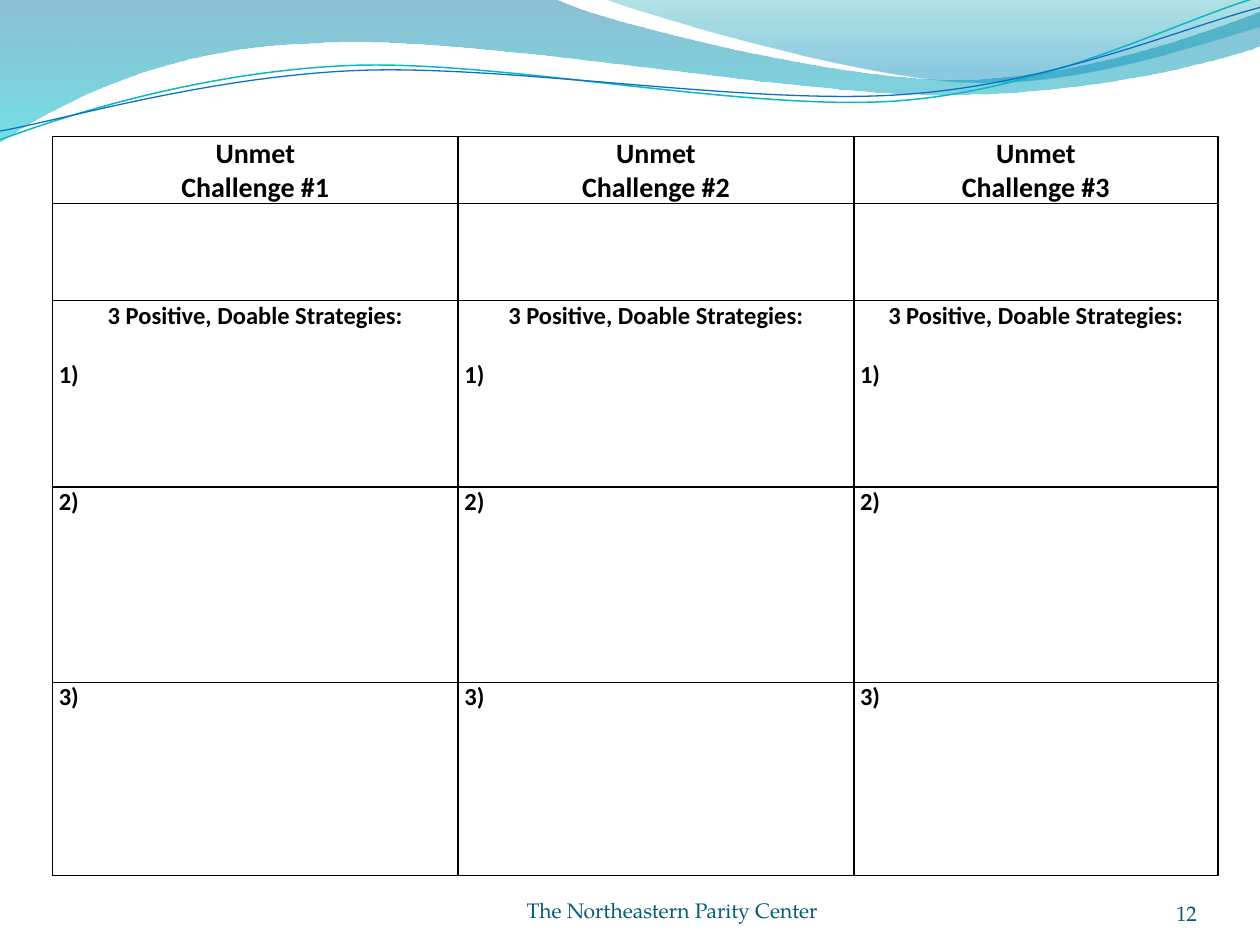
import math
from dataclasses import dataclass
from typing import Optional

from lxml import etree
from pptx import Presentation
from pptx import util as u
from pptx.dml.color import RGBColor
from pptx.enum import text
from pptx.oxml import ns

WIDTH, HEIGHT = u.Inches(10), u.Inches(7.5)
GRID_COLUMNS, GRID_ROWS = 10, 7.5
COLORS = {
    "ink": "000000",
    "footer": "045D75",
    "deep": "0074A1",
    "aqua": "00C6CF",
    "teal": "00A1A9",
    "sky": "008BBF",
    "teal_line": "0AB8BF",
    "blue_line": "0F6FC6",
}
TABLE_LEFT, TABLE_TOP = 5 / 12, 13 / 12
COLUMN_WIDTHS = (3.22, 3.14, 2.89)
ROW_HEIGHTS = (0.5, 0.77, 1.48, 1.55, 1.53)

Point = tuple[float, float]


@dataclass(frozen=True)
class Stop:
    position: float
    color: str
    opacity: int


@dataclass(frozen=True)
class Wave:
    start: Point
    segments: tuple[tuple[float, ...], ...]
    stops: tuple[Stop, ...] = ()
    line: Optional[str] = None
    weight: float = 0
    tilt: float = 0
    pivot: Point = (0, 0)


@dataclass(frozen=True)
class Label:
    wording: str
    left: float
    top: float
    width: float
    alignment: text.PP_ALIGN


@dataclass(frozen=True)
class Entry:
    wording: str
    size: int
    alignment: text.PP_ALIGN = text.PP_ALIGN.LEFT
    space_before: int = 0


WAVES = (
    Wave(
        (0, 0),
        (
            (4.4, -0.01),
            (4.76, 0.17, 6.64, 0.63, 7.58, 0.63),
            (8.53, 0.63, 9.58, 0.26, 10, 0.09),
            (10.01, 0.36),
            (9.83, 0.44, 8.7, 0.76, 7.46, 0.75),
            (6.22, 0.75, 3.82, 0.28, 2.57, 0.34),
            (1.29, 0.36, 0.46, 0.83, -0.01, 1.13),
            (0, 0),
        ),
        stops=(Stop(0, "deep", 45), Stop(1, "aqua", 55)),
    ),
    Wave(
        (4.79, -0.01),
        (
            (5.09, 0.11, 6.82, 0.62, 7.69, 0.65),
            (8.56, 0.69, 9.61, 0.32, 10, 0.21),
            (10, 0),
            (4.79, -0.01),
        ),
        stops=(Stop(0, "teal", 30), Stop(0.8, "sky", 45)),
    ),
    Wave(
        (0, 1.11),
        (
            (0.48, 0.93, 1.58, 0.57, 2.77, 0.52),
            (3.95, 0.47, 5.93, 0.89, 7.13, 0.8),
            (8.33, 0.71, 9.38, 0.15, 9.98, -0.02),
        ),
        line="teal_line", weight=0.85, tilt=-2.7, pivot=(4.99, 0.58),
    ),
    Wave(
        (0, 1.04),
        (
            (0.47, 0.96, 1.64, 0.61, 2.83, 0.56),
            (4.03, 0.51, 5.97, 0.84, 7.17, 0.75),
            (8.36, 0.67, 9.41, 0.21, 10, 0.06),
        ),
        line="blue_line", weight=0.75, tilt=-2.7, pivot=(5, 0.59),
    ),
)
LABELS = (
    Label("The Northeastern Parity Center", 3.5, 6.92, 3.67, text.PP_ALIGN.CENTER),
    Label("12", 8.67, 6.95, 0.83, text.PP_ALIGN.RIGHT),
)


def across(columns: float) -> int:
    return round(WIDTH * columns / GRID_COLUMNS)


def down(rows: float) -> int:
    return round(HEIGHT * rows / GRID_ROWS)


def color(name: str) -> RGBColor:
    return RGBColor.from_string(COLORS[name])


def level(wave: Wave, x: float, y: float) -> Point:
    angle = math.radians(-wave.tilt)
    dx, dy = x - wave.pivot[0], y - wave.pivot[1]
    return (
        across(wave.pivot[0] + dx * math.cos(angle) - dy * math.sin(angle)),
        down(wave.pivot[1] + dx * math.sin(angle) + dy * math.cos(angle)),
    )


def bend(shape, wave: Wave) -> None:
    lines = iter(list(shape.element.iter(ns.qn("a:lnTo"))))
    for segment in wave.segments:
        pieces = [next(lines) for _ in range(len(segment) // 2)]
        if len(pieces) == 3:
            curve = etree.Element(ns.qn("a:cubicBezTo"))
            pieces[0].addprevious(curve)
            for piece in pieces:
                curve.append(piece[0])
                piece.getparent().remove(piece)


def draw_wave(slide, wave: Wave) -> None:
    points = [
        level(wave, *segment[index:index + 2])
        for segment in wave.segments
        for index in range(0, len(segment), 2)
    ]
    builder = slide.shapes.build_freeform(*level(wave, *wave.start))
    builder.add_line_segments(points, close=bool(wave.stops))
    shape = builder.convert_to_shape()
    bend(shape, wave)
    shape.rotation = wave.tilt
    shape.shadow.inherit = False
    if wave.line:
        shape.fill.background()
        shape.line.color.rgb = color(wave.line)
        shape.line.width = u.Pt(wave.weight)
        return
    shape.line.fill.background()
    shape.fill.gradient()
    shape.fill.gradient_angle = 270
    for gradient_stop, stop in zip(shape.fill.gradient_stops, wave.stops):
        gradient_stop.position = stop.position
        gradient_stop.color.rgb = color(stop.color)
    for element, stop in zip(shape.element.iter(ns.qn("a:srgbClr")), wave.stops):
        etree.SubElement(element, ns.qn("a:alpha"), val=str(stop.opacity * 1000))


def draw_label(slide, label: Label) -> None:
    shape = slide.shapes.add_textbox(
        across(label.left), down(label.top), across(label.width), down(0.4)
    )
    frame = shape.text_frame
    frame.text = label.wording
    frame.word_wrap = True
    frame.vertical_anchor = text.MSO_ANCHOR.BOTTOM
    frame.margin_left = frame.margin_right = frame.margin_top = frame.margin_bottom = 0
    paragraph = frame.paragraphs[0]
    paragraph.alignment = label.alignment
    font = paragraph.runs[0].font
    font.name, font.size = "TeX Gyre Pagella", u.Pt(12)
    font.color.rgb = color("footer")


def draw_borders(cell) -> None:
    properties = cell._tc.get_or_add_tcPr()
    for index, side in enumerate(("lnL", "lnR", "lnT", "lnB")):
        border = etree.Element(ns.qn(f"a:{side}"), w=str(u.Pt(1)))
        fill = etree.SubElement(border, ns.qn("a:solidFill"))
        etree.SubElement(fill, ns.qn("a:srgbClr"), val=COLORS["ink"])
        properties.insert(index, border)


def fill_cell(cell, entries: tuple[Entry, ...]) -> None:
    cell.fill.background()
    cell.margin_left = cell.margin_right = u.Inches(0.05)
    cell.margin_top = cell.margin_bottom = 0
    draw_borders(cell)
    cell.text_frame.text = "\n".join(entry.wording for entry in entries)
    for paragraph, entry in zip(cell.text_frame.paragraphs, entries):
        paragraph.alignment = entry.alignment
        paragraph.space_before = u.Pt(entry.space_before)
        font = paragraph.runs[0].font
        font.name, font.size, font.bold = "Calibri", u.Pt(entry.size), True
        font.color.rgb = color("ink")


def challenge_rows(number: int) -> tuple[tuple[Entry, ...], ...]:
    center = text.PP_ALIGN.CENTER
    return (
        (Entry("Unmet", 16, center), Entry(f"Challenge #{number}", 16, center)),
        (),
        (Entry("3 Positive, Doable Strategies:", 14, center), Entry("1)", 14, space_before=17)),
        (Entry("2)", 14),),
        (Entry("3)", 14),),
    )


def draw_challenges(slide) -> None:
    table = slide.shapes.add_table(
        len(ROW_HEIGHTS), len(COLUMN_WIDTHS), across(TABLE_LEFT), down(TABLE_TOP),
        across(sum(COLUMN_WIDTHS)), down(5.87),
    ).table
    table.first_row = table.horz_banding = False
    for row, height in zip(table.rows, ROW_HEIGHTS):
        row.height = down(height)
    for index, width in enumerate(COLUMN_WIDTHS):
        table.columns[index].width = across(width)
        for row_index, entries in enumerate(challenge_rows(index + 1)):
            fill_cell(table.cell(row_index, index), entries)


def main() -> None:
    presentation = Presentation()
    presentation.slide_width, presentation.slide_height = WIDTH, HEIGHT
    slide = presentation.slides.add_slide(presentation.slide_layouts[6])
    for wave in WAVES:
        draw_wave(slide, wave)
    for label in LABELS:
        draw_label(slide, label)
    draw_challenges(slide)
    presentation.save("out.pptx")


if __name__ == "__main__":
    main()
